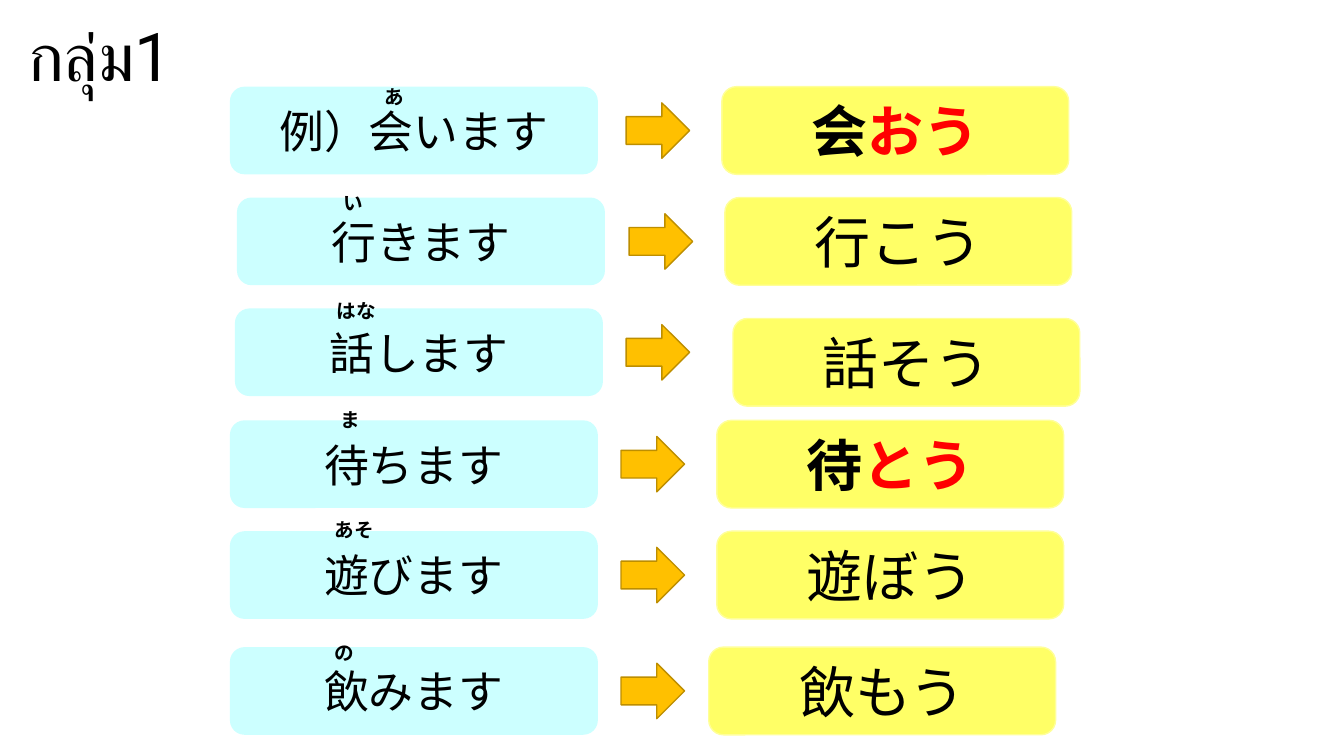
from dataclasses import dataclass

from pptx import Presentation
from pptx.dml.color import RGBColor
from pptx.enum.shapes import MSO_SHAPE as Shape
from pptx.enum.text import MSO_ANCHOR as Anchor, MSO_AUTO_SIZE as AutoSize, PP_ALIGN as Align
from pptx.shapes.autoshape import Shape as AutoShape
from pptx.slide import Slide
from pptx.util import Inches, Pt

COLORS = {
    "text": "000000",
    "ending": "FF0000",
    "verb": "CCFFFF",
    "volitional": "FFFF66",
    "volitional_line": "FFFF99",
    "arrow": "FFC000",
    "arrow_line": "BD8E00",
}
BOX_HEIGHT = 0.87
VERB_WIDTH = 3.65
VOLITIONAL_WIDTH = 3.44
ARROW_WIDTH, ARROW_HEIGHT = 0.63, 0.55
READING_WIDTH, READING_HEIGHT = 1.73, 0.34


@dataclass
class VerbRow:
    top: float
    verb: str
    verb_left: float
    arrow_left: float
    volitional: str
    volitional_left: float
    reading: str
    reading_left: float
    reading_top: float
    red_ending: str = ""
    volitional_drop: float = 0


ROWS = [
    VerbRow(0.86, "例）会います", 2.28, 6.21, "会", 7.16, "あ", 3.72, 0.79, red_ending="おう"),
    VerbRow(1.96, "行きます", 2.35, 6.24, "行こう", 7.19, "い", 3.31, 1.84),
    VerbRow(3.06, "話します", 2.33, 6.21, "話そう", 7.27, "はな", 3.24, 2.92, volitional_drop=0.1),
    VerbRow(4.17, "待ちます", 2.28, 6.16, "待", 7.11, "ま", 3.28, 4.0, red_ending="とう"),
    VerbRow(5.27, "遊びます", 2.28, 6.16, "遊ぼう", 7.11, "あそ", 3.22, 5.09),
    VerbRow(6.42, "飲みます", 2.28, 6.16, "飲もう", 7.03, "の", 3.22, 6.31),
]


def color(name: str) -> RGBColor:
    return RGBColor.from_string(COLORS[name])


def add_block(slide: Slide, kind: Shape, left: float, top: float, width: float,
              height: float, fill: str, line: str = "") -> AutoShape:
    shape = slide.shapes.add_shape(kind, Inches(left), Inches(top), Inches(width), Inches(height))
    shape.shadow.inherit = False
    shape.fill.solid()
    shape.fill.fore_color.rgb = color(fill)
    if line:
        shape.line.color.rgb = color(line)
        shape.line.width = Pt(1)
    else:
        shape.line.fill.background()
    return shape


def write(shape: AutoShape, text: str, size: int, font: str, align: Align,
          anchor: Anchor, bold: bool = False, red_ending: str = "") -> None:
    frame = shape.text_frame
    frame.word_wrap = True
    frame.vertical_anchor = anchor
    paragraph = frame.paragraphs[0]
    paragraph.alignment = align
    paragraph.font.size = Pt(size)
    paragraph.font.name = font
    paragraph.font.bold = bold
    for part, shade in ((text, "text"), (red_ending, "ending")):
        if part:
            run = paragraph.add_run()
            run.text = part
            run.font.color.rgb = color(shade)


def add_row(slide: Slide, row: VerbRow) -> None:
    verb = add_block(slide, Shape.ROUNDED_RECTANGLE, row.verb_left, row.top,
                     VERB_WIDTH, BOX_HEIGHT, "verb")
    write(verb, row.verb, 32, "Lato", Align.CENTER, Anchor.MIDDLE)

    arrow_top = row.top + (BOX_HEIGHT - ARROW_HEIGHT) / 2
    add_block(slide, Shape.RIGHT_ARROW, row.arrow_left, arrow_top,
              ARROW_WIDTH, ARROW_HEIGHT, "arrow", "arrow_line")

    volitional = add_block(slide, Shape.ROUNDED_RECTANGLE, row.volitional_left,
                           row.top + row.volitional_drop, VOLITIONAL_WIDTH, BOX_HEIGHT,
                           "volitional", "volitional_line")
    write(volitional, row.volitional, 40, "Lato", Align.CENTER, Anchor.MIDDLE,
          bold=bool(row.red_ending), red_ending=row.red_ending)

    reading = slide.shapes.add_textbox(Inches(row.reading_left), Inches(row.reading_top),
                                       Inches(READING_WIDTH), Inches(READING_HEIGHT))
    write(reading, row.reading, 14, "Arial", Align.LEFT, Anchor.TOP, bold=True)
    reading.text_frame.auto_size = AutoSize.SHAPE_TO_FIT_TEXT


def add_title(slide: Slide) -> None:
    title = slide.shapes.title
    title.left, title.top = Inches(0.18), Inches(0.09)
    title.width, title.height = Inches(3.29), Inches(0.91)
    write(title, "กลุ่ม1", 48, "Roboto", Align.LEFT, Anchor.TOP)
    title.text_frame.auto_size = AutoSize.SHAPE_TO_FIT_TEXT


def main() -> None:
    presentation = Presentation()
    presentation.slide_width = Inches(13.33)
    presentation.slide_height = Inches(7.5)
    slide = presentation.slides.add_slide(presentation.slide_layouts[5])
    add_title(slide)
    for row in ROWS:
        add_row(slide, row)
    presentation.save("out.pptx")


if __name__ == "__main__":
    main()
